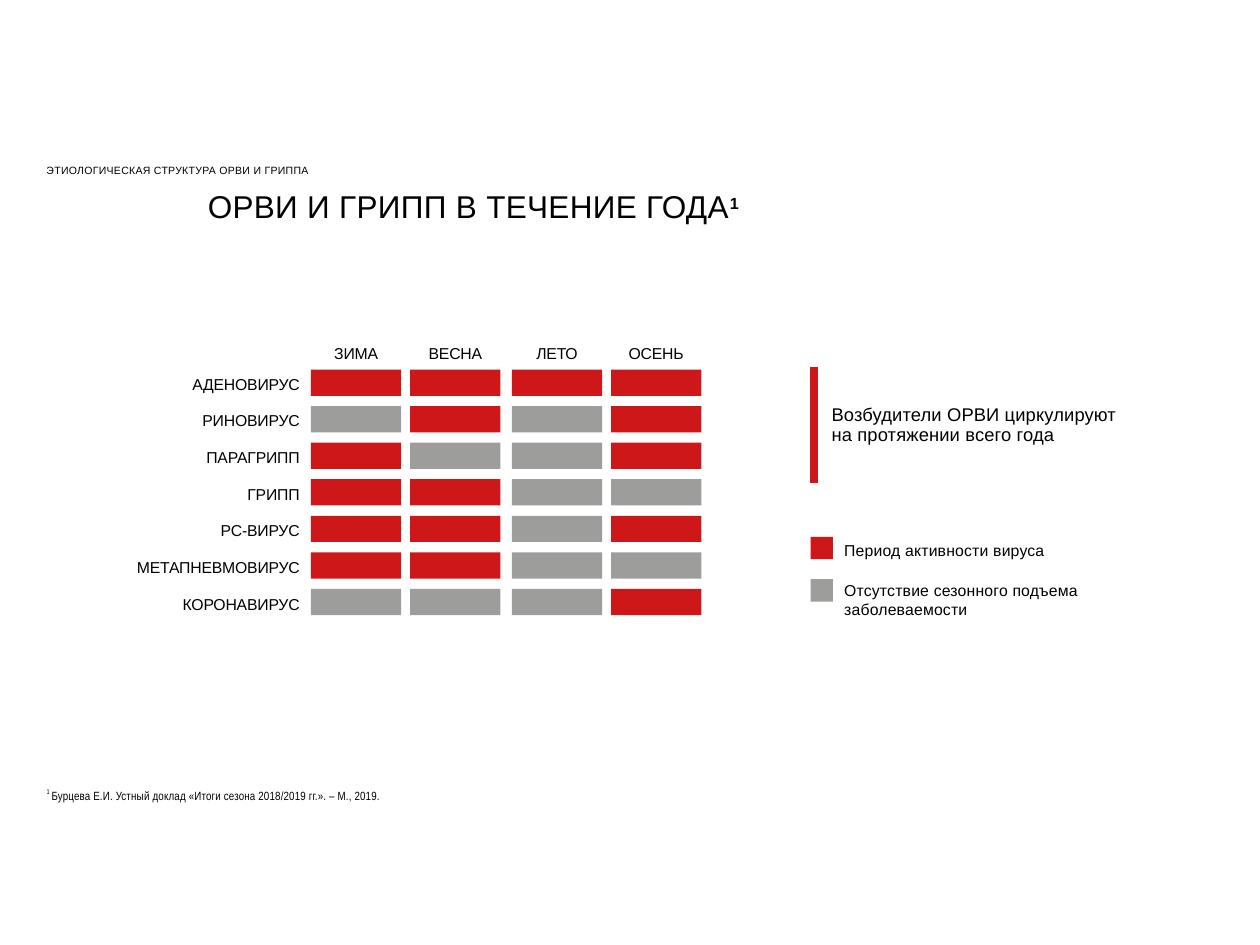
from dataclasses import dataclass

from lxml import etree
from pptx import Presentation
from pptx.dml.color import RGBColor
from pptx.enum.shapes import MSO_CONNECTOR, MSO_SHAPE
from pptx.enum.text import MSO_ANCHOR, PP_ALIGN
from pptx.oxml.ns import qn
from pptx.slide import Slide
from pptx.util import Pt

LEFT, CENTER, RIGHT = PP_ALIGN.LEFT, PP_ALIGN.CENTER, PP_ALIGN.RIGHT
TOP, MIDDLE = MSO_ANCHOR.TOP, MSO_ANCHOR.MIDDLE
RECTANGLE = MSO_SHAPE.RECTANGLE
STRAIGHT = MSO_CONNECTOR.STRAIGHT

COLORS = {"active": "CD1719", "inactive": "9D9D9C", "text": "000000"}

CELL_WIDTH, CELL_HEIGHT = 51.6, 15
GRID_TOP, ROW_PITCH = 211.2, 20.88
LABEL_RIGHT, LABEL_TOP, LABEL_PITCH = 171.2, 213.9, 20.95
SEASON_TOP, LABEL_HEIGHT = 196.6, 10.8
LEGEND_LEFT, LEGEND_SIZE = 463.2, 12.8


@dataclass(frozen=True)
class Season:
    name: str
    left: float
    label_width: float


@dataclass(frozen=True)
class Virus:
    name: str
    label_width: float
    active: tuple[bool, ...]


@dataclass(frozen=True)
class Label:
    text: str
    left: float
    top: float
    width: float
    height: float
    size: float = 9
    font: str = "Arial"
    spacing: float = 0.1
    align: PP_ALIGN = LEFT
    anchor: MSO_ANCHOR = TOP
    line_spacing: float | Pt | None = None


@dataclass(frozen=True)
class Superscript:
    text: str
    size: float
    baseline: int
    bold: bool = False


@dataclass(frozen=True)
class LegendItem:
    color: str
    marker_top: float
    label: Label


SEASONS = (
    Season("ЗИМА", 177.7, 27.4),
    Season("ВЕСНА", 234.4, 32.4),
    Season("ЛЕТО", 292.5, 25.9),
    Season("ОСЕНЬ", 349.2, 33.1),
)

VIRUSES = (
    Virus("АДЕНОВИРУС", 63.4, (True, True, True, True)),
    Virus("РИНОВИРУС", 57.6, (False, True, False, True)),
    Virus("ПАРАГРИПП", 55.4, (True, False, False, True)),
    Virus("ГРИПП", 31.7, (True, True, False, False)),
    Virus("РС-ВИРУС", 47.5, (True, True, False, True)),
    Virus("МЕТАПНЕВМОВИРУС", 95.8, (True, True, False, False)),
    Virus("КОРОНАВИРУС", 69.8, (False, False, False, True)),
)

SECTION = Label("ЭТИОЛОГИЧЕСКАЯ СТРУКТУРА ОРВИ И ГРИППА", 26.6, 93.6, 158.4, 7.2,
                size=6, spacing=0.18)
TITLE = Label("ОРВИ И ГРИПП В ТЕЧЕНИЕ ГОДА", 27.4, 106.6, 486, 21.6,
              size=18, spacing=0.2, align=CENTER, anchor=MIDDLE)
TITLE_MARK = Superscript("1", 15.8, 32, bold=True)
CONCLUSION = Label("Возбудители ОРВИ циркулируют на протяжении всего года",
                   475.2, 231.8, 169.2, 22.3, size=10.5, line_spacing=Pt(11.2))
FOOTNOTE = Label("Бурцева Е.И. Устный доклад «Итоги сезона 2018/2019 гг.». – М., 2019.",
                 26.6, 450, 200.2, 7.9, size=6.8, font="Arial Narrow", spacing=0.08)
FOOTNOTE_MARK = Superscript("1 ", 6.8, 51)

LEGEND = (
    LegendItem("active", 306.8,
               Label("Период активности вируса", 482.4, 308.9, 118.1, 10.8)),
    LegendItem("inactive", 331,
               Label("Отсутствие сезонного подъема заболеваемости",
                     482.4, 331.2, 137.5, 22.3, line_spacing=1.04)),
)


def color(name: str) -> RGBColor:
    return RGBColor.from_string(COLORS[name])


def format_run(run, label: Label) -> None:
    run.font.name = label.font
    run.font.size = Pt(label.size)
    run.font.color.rgb = color("text")
    run._r.get_or_add_rPr().set("spc", str(round(label.spacing * 100)))


def add_label(slide: Slide, label: Label):
    """Add a text box without margins and return its paragraph."""
    text_box = slide.shapes.add_textbox(
        Pt(label.left), Pt(label.top), Pt(label.width), Pt(label.height))
    text_frame = text_box.text_frame
    text_frame.word_wrap = True
    text_frame.vertical_anchor = label.anchor
    text_frame.margin_left = text_frame.margin_right = 0
    text_frame.margin_top = text_frame.margin_bottom = 0
    text_frame.text = label.text
    paragraph = text_frame.paragraphs[0]
    paragraph.alignment = label.align
    if label.line_spacing is not None:
        paragraph.line_spacing = label.line_spacing
    format_run(paragraph.runs[0], label)
    return paragraph


def add_superscript(paragraph, mark: Superscript, label: Label):
    run = paragraph.add_run()
    run.text = mark.text
    format_run(run, label)
    run.font.size = Pt(mark.size)
    run.font.bold = mark.bold
    run._r.get_or_add_rPr().set("baseline", str(mark.baseline * 1000))
    return run


def add_block(slide: Slide, left: float, top: float, width: float, height: float,
              fill: str) -> None:
    shape = slide.shapes.add_shape(RECTANGLE, Pt(left), Pt(top), Pt(width), Pt(height))
    shape.shadow.inherit = False
    shape.fill.solid()
    shape.fill.fore_color.rgb = color(fill)
    shape.line.fill.background()


def add_season_grid(slide: Slide) -> None:
    for season in SEASONS:
        label_left = season.left + (CELL_WIDTH - season.label_width) / 2
        add_label(slide, Label(season.name, label_left, SEASON_TOP, season.label_width,
                               LABEL_HEIGHT, spacing=-0.1, align=CENTER))
    for row, virus in enumerate(VIRUSES):
        add_label(slide, Label(virus.name, LABEL_RIGHT - virus.label_width,
                               LABEL_TOP + row * LABEL_PITCH, virus.label_width,
                               LABEL_HEIGHT, spacing=-0.12, align=RIGHT))
        for season, is_active in zip(SEASONS, virus.active):
            add_block(slide, season.left, GRID_TOP + row * ROW_PITCH, CELL_WIDTH,
                      CELL_HEIGHT, "active" if is_active else "inactive")


def add_accent_line(slide: Slide) -> None:
    line = slide.shapes.add_connector(STRAIGHT, Pt(465.1), Pt(210), Pt(465.1), Pt(276))
    line.line.color.rgb = color("active")
    line.line.width = Pt(5)
    etree.SubElement(line._element.spPr, qn("a:effectLst"))


def main() -> None:
    presentation = Presentation()
    presentation.slide_width, presentation.slide_height = Pt(720), Pt(540)
    slide = presentation.slides.add_slide(presentation.slide_layouts[6])

    add_label(slide, SECTION)
    add_superscript(add_label(slide, TITLE), TITLE_MARK, TITLE)
    add_season_grid(slide)
    add_accent_line(slide)
    add_label(slide, CONCLUSION)
    for item in LEGEND:
        add_block(slide, LEGEND_LEFT, item.marker_top, LEGEND_SIZE, LEGEND_SIZE, item.color)
        add_label(slide, item.label)

    footnote = add_label(slide, FOOTNOTE)
    mark = add_superscript(footnote, FOOTNOTE_MARK, FOOTNOTE)
    footnote.runs[0]._r.addprevious(mark._r)

    presentation.save("out.pptx")


if __name__ == "__main__":
    main()
